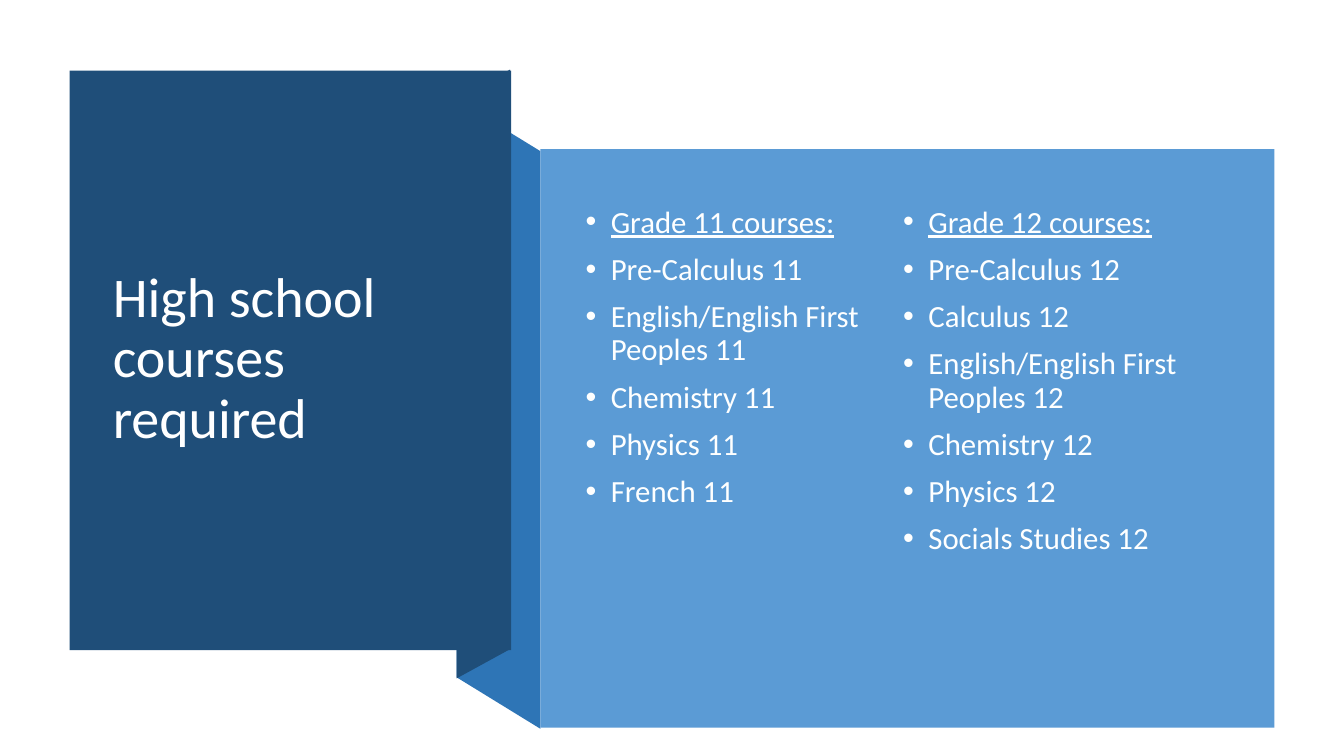
import pptx
import pptx.util
import pptx.dml.color
import pptx.enum.shapes
import pptx.enum.text
import lxml.etree
from pptx.util import Inches

TITLE = "High school courses required"
COURSES = [
    ["Grade 11 courses:", "Pre-Calculus 11", "English/English First Peoples 11",
     "Chemistry 11", "Physics 11", "French 11"],
    ["Grade 12 courses:", "Pre-Calculus 12", "Calculus 12",
     "English/English First Peoples 12", "Chemistry 12", "Physics 12",
     "Socials Studies 12"],
]
COLORS = {"navy": "1F4E79", "fold": "2E75B6", "panel": "5B9BD5",
          "title": "FFFFFF", "course": "FEFFFF"}
RIBBON_FOLDS = [
    ("fold", [(5.36, 7.23), (4.53, 6.72), (4.53, 0.99), (5.36, 1.5)]),
    ("navy", [(5.06, 6.44), (4.53, 6.73), (4.53, 0.98), (5.06, 0.69)]),
]
PANELS = [("navy", (0.69, 0.7, 4.38, 5.75)), ("panel", (5.36, 1.48, 7.28, 5.74))]
TITLE_BOX = (1.02, 1.07, 3.71, 4.99)
COURSES_BOX = (5.71, 2, 3.35, 4.5)
COLUMN_STEP = 3.15
TITLE_FONT = {"name": "Calibri", "size": pptx.util.Pt(40)}
COURSE_FONT = {"name": "Calibri", "size": pptx.util.Pt(22)}


def rgb(color):
    return pptx.dml.color.RGBColor.from_string(COLORS[color])


def paint(shape, color):
    shape.shadow.inherit = False
    shape.fill.solid()
    shape.fill.fore_color.rgb = rgb(color)
    shape.line.fill.background()


def add_text(slide, box, anchor):
    frame = slide.shapes.add_textbox(*map(Inches, box)).text_frame
    frame.word_wrap = True
    frame.vertical_anchor = anchor
    return frame


def write(paragraph, text, font, color):
    paragraph.line_spacing = 0.9
    run = paragraph.add_run()
    run.text = text
    for attribute, value in font.items():
        setattr(run.font, attribute, value)
    run.font.color.rgb = rgb(color)


def add_bullet(paragraph):
    properties = paragraph._p.get_or_add_pPr()
    properties.set("marL", str(Inches(0.25)))
    properties.set("indent", str(-Inches(0.25)))
    for tag, attribute, value in [("a:buFont", "typeface", "Arial"),
                                  ("a:buChar", "char", "•")]:
        bullet = lxml.etree.SubElement(properties, pptx.oxml.ns.qn(tag))
        bullet.set(attribute, value)


def main():
    deck = pptx.Presentation()
    deck.slide_width, deck.slide_height = Inches(13.33), Inches(7.5)
    slide = deck.slides.add_slide(deck.slide_layouts[6])

    for color, corners in RIBBON_FOLDS:
        points = [(Inches(x), Inches(y)) for x, y in corners]
        outline = slide.shapes.build_freeform(*points[0])
        outline.add_line_segments(points[1:], close=True)
        paint(outline.convert_to_shape(), color)

    for color, box in PANELS:
        panel = slide.shapes.add_shape(
            pptx.enum.shapes.MSO_SHAPE.RECTANGLE, *map(Inches, box))
        paint(panel, color)

    title = add_text(slide, TITLE_BOX, pptx.enum.text.MSO_ANCHOR.MIDDLE)
    write(title.paragraphs[0], TITLE, TITLE_FONT, "title")

    left, top, width, height = COURSES_BOX
    for column, courses in enumerate(COURSES):
        box = (left + column * COLUMN_STEP, top, width, height)
        grade = add_text(slide, box, pptx.enum.text.MSO_ANCHOR.TOP)
        for row, course in enumerate(courses):
            entry = grade.add_paragraph() if row else grade.paragraphs[0]
            entry.space_before = pptx.util.Pt(10 if row else 0)
            write(entry, course, {**COURSE_FONT, "underline": row == 0}, "course")
            add_bullet(entry)

    deck.save("out.pptx")


if __name__ == "__main__":
    main()
